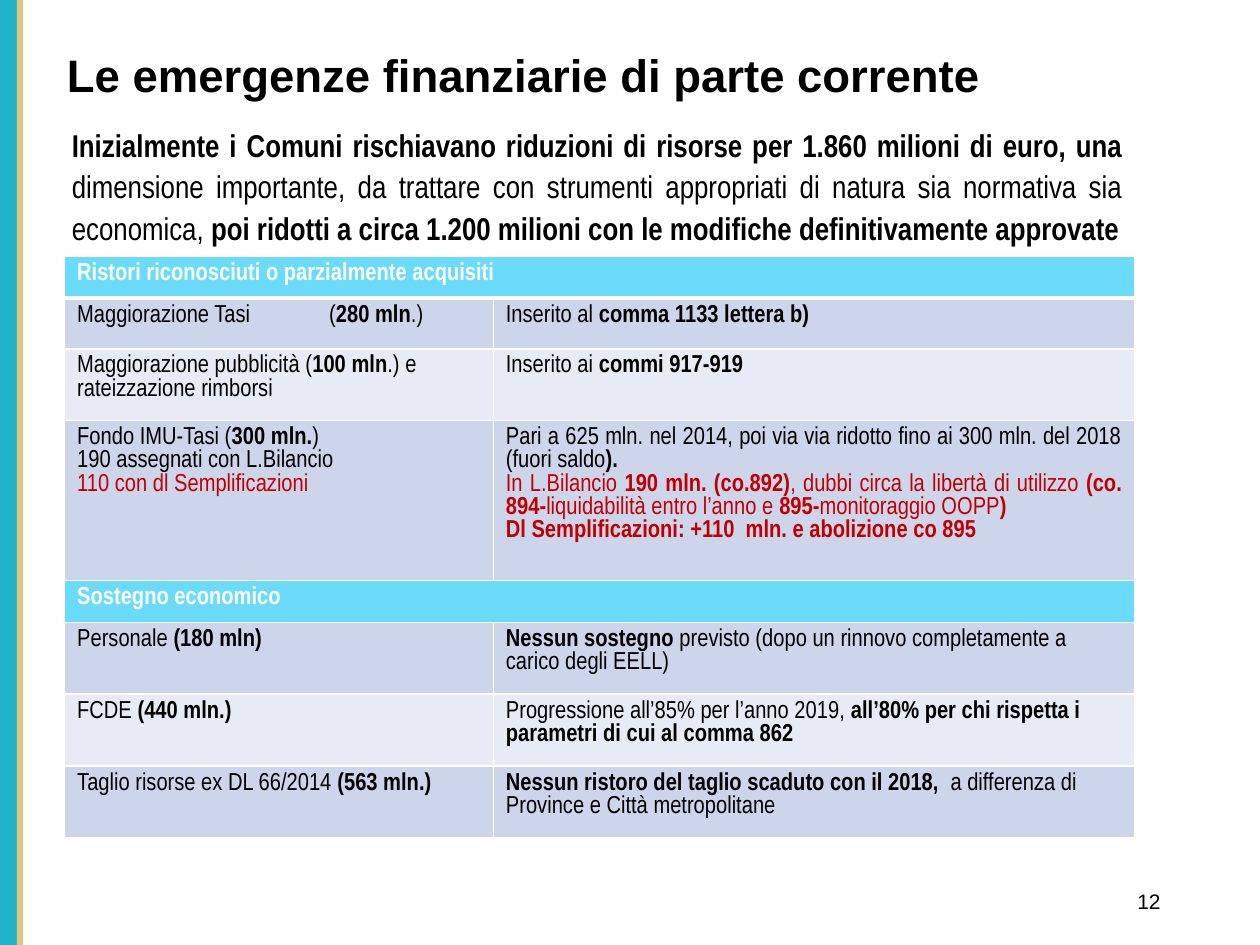
from lxml import etree
from pptx import Presentation
from pptx.dml.color import RGBColor
from pptx.enum.shapes import MSO_SHAPE
from pptx.enum.text import MSO_ANCHOR, PP_ALIGN
from pptx.oxml.ns import qn
from pptx.util import Pt

RECTANGLE = MSO_SHAPE.RECTANGLE
TOP, MIDDLE = MSO_ANCHOR.TOP, MSO_ANCHOR.MIDDLE
LEFT, RIGHT, JUSTIFY = PP_ALIGN.LEFT, PP_ALIGN.RIGHT, PP_ALIGN.JUSTIFY

BLACK = RGBColor(0x00, 0x00, 0x00)
WHITE = RGBColor(0xFF, 0xFF, 0xFF)
RED = RGBColor(0xC0, 0x00, 0x00)
TEAL = RGBColor(0x21, 0xB2, 0xC9)
SAND = RGBColor(0xE1, 0xC4, 0x83)
CYAN = RGBColor(0x6B, 0xDB, 0xFA)
BAND_DARK = RGBColor(0xCC, 0xD5, 0xEA)
BAND_LIGHT = RGBColor(0xE7, 0xEB, 0xF5)

SANS, NARROW = "Arial", "Arial Narrow"

# Content: ** switches bold on and off
TITLE = "**Le emergenze finanziarie di parte corrente**"
INTRO = (
    "**Inizialmente i Comuni rischiavano riduzioni di risorse per 1.860 milioni di euro, una **"
    "dimensione importante, da trattare con strumenti appropriati di natura sia normativa "
    "sia economica, "
    "**poi ridotti a circa 1.200 milioni con le modifiche definitivamente approvate**"
)
PAGE_NUMBER = "12"

# Rows: height, then cells as lists of (text, colour); one cell is a section heading
ROWS = [
    (23.4, [[("**Ristori riconosciuti o parzialmente acquisiti**", WHITE)]]),
    (29.1, [[("Maggiorazione Tasi\t(**280 mln**.)", BLACK)],
            [("Inserito al **comma 1133 lettera b)**", BLACK)]]),
    (41.1, [[("Maggiorazione pubblicità (**100 mln**.) e rateizzazione rimborsi", BLACK)],
            [("Inserito ai **commi 917-919**", BLACK)]]),
    (91.4, [[("Fondo IMU-Tasi (**300 mln.**)", BLACK),
             ("190 assegnati con L.Bilancio", BLACK),
             ("110 con dl Semplificazioni", RED)],
            [("Pari a 625 mln. nel 2014, poi via via ridotto fino ai 300 mln. del 2018 "
              "(fuori saldo**).**", BLACK),
             ("In L.Bilancio **190 mln. (co.892)**, dubbi circa la libertà di utilizzo "
              "**(co. 894-**liquidabilità entro l’anno e **895-**monitoraggio OOPP**)**", RED),
             ("**Dl Semplificazioni: +110  mln. e abolizione co 895**", RED)]]),
    (24, [[("**Sostegno economico**", WHITE)]]),
    (40.7, [[("Personale **(180 mln)**", BLACK)],
            [("**Nessun sostegno **previsto (dopo un rinnovo completamente a carico "
              "degli EELL)", BLACK)]]),
    (41.1, [[("FCDE **(440 mln.)**", BLACK)],
            [("Progressione all’85% per l’anno 2019, **all’80% per chi rispetta i "
              "parametri di cui al comma 862**", BLACK)]]),
    (40.2, [[("Taglio risorse ex DL 66/2014 **(563 mln.)**", BLACK)],
            [("**Nessun ristoro del taglio scaduto con il 2018,  **a differenza di "
              "Province e Città metropolitane", BLACK)]]),
]
COLUMN_WIDTHS = (245, 366.4)
JUSTIFIED_CELL = (3, 1)
AMOUNT_TAB = 144


def add_tab_stop(paragraph, position):
    tabs = etree.SubElement(paragraph._p.get_or_add_pPr(), qn("a:tabLst"))
    etree.SubElement(tabs, qn("a:tab"), pos=str(Pt(position)), algn="l")


def write(frame, paragraphs, font, size, align=LEFT, spacing=1.0, anchor=TOP):
    frame.word_wrap = True
    frame.vertical_anchor = anchor
    for i, (text, colour) in enumerate(paragraphs):
        paragraph = frame.paragraphs[0] if i == 0 else frame.add_paragraph()
        paragraph.alignment = align
        paragraph.line_spacing = spacing
        paragraph.space_before = Pt(0)
        if "\t" in text:
            add_tab_stop(paragraph, AMOUNT_TAB)
        for j, part in enumerate(text.split("**")):
            if part:
                run = paragraph.add_run()
                run.text = part
                run.font.name = font
                run.font.size = Pt(size)
                run.font.bold = j % 2 == 1
                run.font.color.rgb = colour


def set_borders(cell, **widths):
    properties = cell._tc.get_or_add_tcPr()
    for side in ("L", "R", "T", "B"):
        line = etree.SubElement(properties, qn(f"a:ln{side}"), w=str(Pt(widths.get(side, 1))))
        fill = etree.SubElement(line, qn("a:solidFill"))
        etree.SubElement(fill, qn("a:srgbClr"), val=str(WHITE))


def add_bar(slide, left, width, colour):
    bar = slide.shapes.add_shape(RECTANGLE, Pt(left), Pt(0), Pt(width), Pt(540))
    bar.shadow.inherit = False
    bar.fill.solid()
    bar.fill.fore_color.rgb = colour
    bar.line.fill.background()


def add_text(slide, box, *args, **options):
    frame = slide.shapes.add_textbox(*map(Pt, box)).text_frame
    write(frame, *args, **options)


def add_measures_table(slide):
    table = slide.shapes.add_table(
        len(ROWS), len(COLUMN_WIDTHS), Pt(36.9), Pt(146.2),
        Pt(sum(COLUMN_WIDTHS)), Pt(sum(height for height, _ in ROWS))).table
    for column, width in zip(table.columns, COLUMN_WIDTHS):
        column.width = Pt(width)
    for r, (height, contents) in enumerate(ROWS):
        table.rows[r].height = Pt(height)
        is_heading = len(contents) == 1
        band = CYAN if is_heading else BAND_DARK if r % 2 else BAND_LIGHT
        for cell in table.rows[r].cells:
            # The first heading is closed by a thicker rule
            set_borders(cell, B=3 if r == 0 else 1, T=3 if r == 1 else 1)
            cell.fill.solid()
            cell.fill.fore_color.rgb = band
        if is_heading:
            table.cell(r, 0).merge(table.cell(r, 1))
        for c, paragraphs in enumerate(contents):
            align = JUSTIFY if (r, c) == JUSTIFIED_CELL else LEFT
            write(table.cell(r, c).text_frame, paragraphs, NARROW, 14, align)


def main():
    deck = Presentation()
    deck.slide_width, deck.slide_height = Pt(720), Pt(540)
    slide = deck.slides.add_slide(deck.slide_layouts[5])

    # Side bars
    add_bar(slide, 0, 9.6, TEAL)
    add_bar(slide, 9.6, 3.6, SAND)

    # Title and introduction
    title = slide.shapes.title
    title.left, title.top, title.width, title.height = map(Pt, (31, 25.2, 587.5, 38.9))
    write(title.text_frame, [(TITLE, BLACK)], SANS, 26, spacing=0.9, anchor=MIDDLE)
    add_text(slide, (34, 66.2, 614.9, 77), [(INTRO, BLACK)], NARROW, 18, JUSTIFY, spacing=1.1)

    # Table and page number
    add_measures_table(slide)
    add_text(slide, (508.3, 500.4, 162, 28.8), [(PAGE_NUMBER, BLACK)], SANS, 12, RIGHT,
             anchor=MIDDLE)

    deck.save("out.pptx")


if __name__ == "__main__":
    main()
